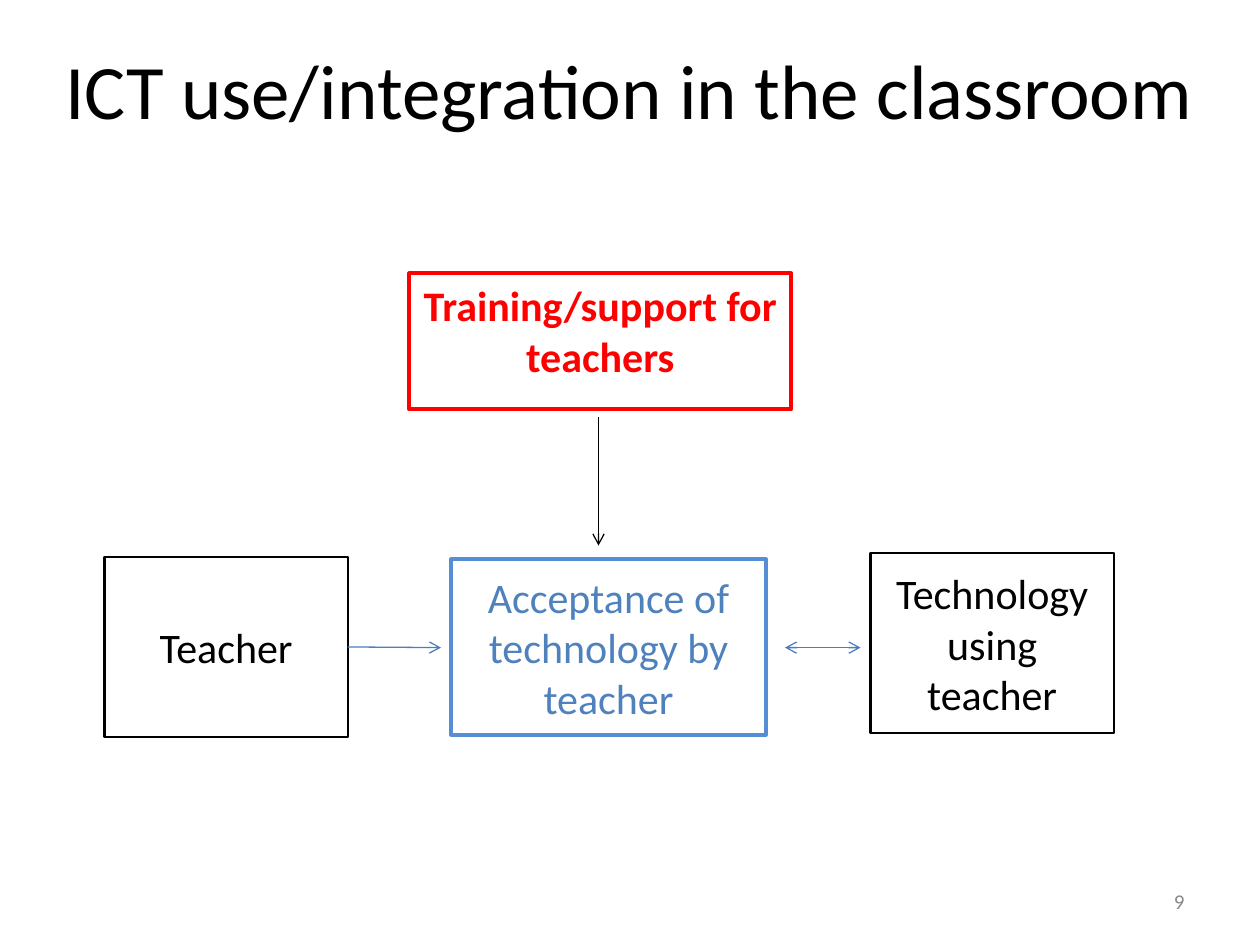
from lxml import etree
from pptx import Presentation
from pptx.dml.color import RGBColor
from pptx.enum.shapes import MSO_CONNECTOR, MSO_SHAPE
from pptx.enum.text import MSO_ANCHOR, PP_ALIGN
from pptx.oxml.ns import qn
from pptx.util import Inches, Pt

RECT = MSO_SHAPE.RECTANGLE
STRAIGHT = MSO_CONNECTOR.STRAIGHT
TOP, MIDDLE = MSO_ANCHOR.TOP, MSO_ANCHOR.MIDDLE
LEFT, CENTER, RIGHT = PP_ALIGN.LEFT, PP_ALIGN.CENTER, PP_ALIGN.RIGHT


def rgb(color):
    return RGBColor.from_string(color)


def write(shape, text, size, color, align, anchor=MIDDLE, bold=False):
    tf = shape.text_frame
    tf.word_wrap = True
    tf.vertical_anchor = anchor
    p = tf.paragraphs[0]
    p.text = text
    p.alignment = align
    p.font.name = "Calibri"
    p.font.size = Pt(size)
    p.font.bold = bold
    p.font.color.rgb = rgb(color)


prs = Presentation()
prs.slide_width, prs.slide_height = Inches(10), Inches(7.5)
s = prs.slides.add_slide(prs.slide_layouts[5])

title = s.shapes.title
title.left, title.top = Inches(0.42), Inches(0.41)
title.width, title.height = Inches(9.42), Inches(0.59)
write(title, "ICT use/integration in the classroom", 44, "000000", LEFT)

number = s.shapes.add_textbox(Inches(7.17), Inches(6.95), Inches(2.33), Inches(0.4))
write(number, "9", 12, "898989", RIGHT)

boxes = [
    ("Training/support for teachers", 3.25, 2.17, 3.03, 1.08, "FF0000", 2.25, "FF0000", TOP, True),
    ("Teacher", 0.83, 4.42, 1.93, 1.43, "000000", 1.25, "000000", MIDDLE, False),
    ("Acceptance of technology by teacher", 3.58, 4.44, 2.5, 1.39, "558ED5", 2.25, "4F81BD", MIDDLE, False),
    ("Technology using teacher", 6.91, 4.39, 1.93, 1.43, "000000", 1.25, "000000", MIDDLE, False),
]
shapes = {}
for text, x, y, w, h, line, weight, color, anchor, bold in boxes:
    box = s.shapes.add_shape(RECT, Inches(x), Inches(y), Inches(w), Inches(h))
    box.shadow.inherit = False
    box.fill.solid()
    box.fill.fore_color.rgb = rgb("FFFFFF")
    box.line.color.rgb = rgb(line)
    box.line.width = Pt(weight)
    write(box, text, 24, color, CENTER, anchor, bold)
    shapes[text] = box

arrows = [
    (4.75, 3.31, 4.75, 4.33, "000000", ["a:tailEnd"], None),
    (6.23, 5.14, 6.83, 5.14, "4B7EBC", ["a:headEnd", "a:tailEnd"], None),
    (2.76, 5.14, 3.5, 5.14, "4B7EBC", ["a:tailEnd"], "Teacher"),
]
for x1, y1, x2, y2, color, ends, start in arrows:
    arrow = s.shapes.add_connector(STRAIGHT, Inches(x1), Inches(y1), Inches(x2), Inches(y2))
    if start:
        arrow.begin_connect(shapes[start], 3)
    arrow.line.color.rgb = rgb(color)
    arrow.line.width = Pt(0.75)
    ln = arrow.line._get_or_add_ln()
    for end in ends:
        etree.SubElement(ln, qn(end), type="arrow")
    etree.SubElement(arrow._element.spPr, qn("a:effectLst"))

prs.save("out.pptx")
